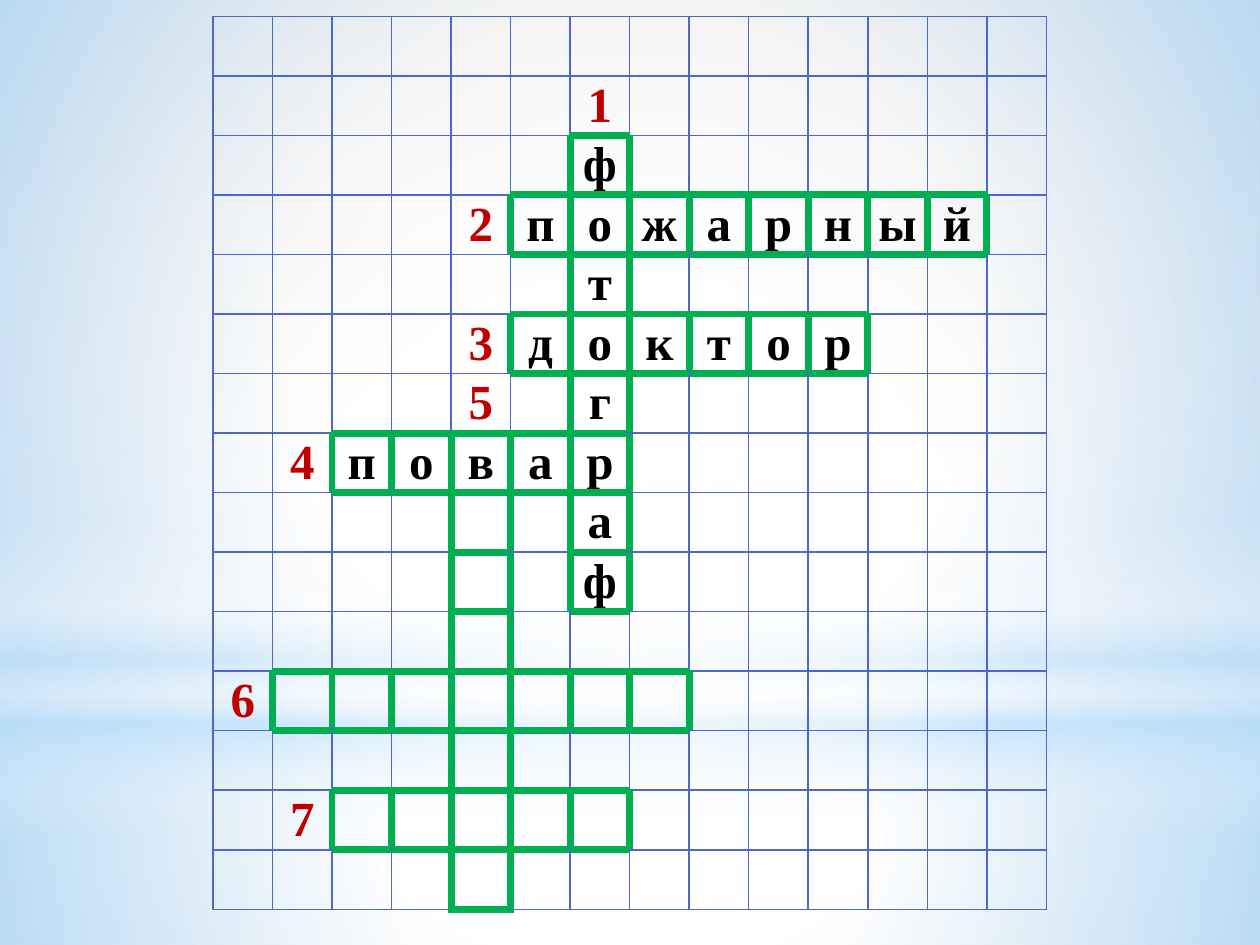
from typing import NamedTuple

import lxml.etree
import pptx
import pptx.dml.color
import pptx.enum.shapes
import pptx.enum.text
import pptx.oxml
import pptx.oxml.ns
import pptx.util

Inches = pptx.util.Inches
Kind = pptx.enum.shapes.MSO_SHAPE
ROWS, COLS = 15, 14
SIDE = 7.09 / ROWS
LEFT, TOP = 1.69, 0.13
BLUE, GREEN, RED, BLACK = "4E67C8", "00B050", "C00000", "000000"
WHITE, SKY = "FFFFFF", "B4DCFA"
FONT = "Times New Roman"
NS = pptx.oxml.ns.nsdecls("a")


class Stop(NamedTuple):
    at: int
    tint: str
    alpha: int = 100


class Glow(NamedTuple):
    kind: int
    box: tuple[float, float, float, float]
    stops: list[Stop]
    round: bool = True


class Word(NamedTuple):
    mark: str
    row: int
    col: int
    size: int
    text: str = ""
    down: bool = False


CENTRE = (50, 50, 50, 50)
GLOWS = [
    Glow(Kind.RECTANGLE, (0, 5.58, 10, 1.92),
         [Stop(0, WHITE, 91), Stop(37, WHITE, 76), Stop(100, SKY, 79)]),
    Glow(Kind.RECTANGLE, (0, 0, 10, 5.58),
         [Stop(0, WHITE, 89), Stop(48, WHITE, 62), Stop(100, SKY, 79)]),
    Glow(Kind.RECTANGLE, (0, 4.12, 10, 2.5),
         [Stop(0, WHITE, 0), Stop(29, WHITE, 30), Stop(45, SKY, 40),
          Stop(55, WHITE, 26), Stop(65, SKY, 60), Stop(100, WHITE, 0)], False),
    Glow(Kind.OVAL, (0, 1.75, 10, 5.58), [Stop(0, WHITE), Stop(56, WHITE, 0)]),
]

# Row and column of each word's first letter
WORDS = [
    Word("1", 2, 6, 8, "фотограф", True),
    Word("2", 3, 5, 8, "пожарный"),
    Word("3", 5, 5, 6, "доктор"),
    Word("4", 7, 2, 5, "повар"),
    Word("5", 7, 4, 8, down=True),
    Word("6", 11, 1, 7),
    Word("7", 13, 2, 5),
]
SIDES = {"L": (0, -1), "R": (0, 1), "T": (-1, 0), "B": (1, 0)}


def paint(fill, tint: str) -> None:
    fill.solid()
    fill.fore_color.rgb = pptx.dml.color.RGBColor.from_string(tint)


def blend(root, stops: list[Stop], focus: tuple | None) -> None:
    """Swap the solid fill under root for a gradient."""
    marks = "".join(
        f'<a:gs pos="{s.at * 1000}"><a:srgbClr val="{s.tint}">'
        f'<a:alpha val="{s.alpha * 1000}"/></a:srgbClr></a:gs>' for s in stops)
    if focus:
        rect = " ".join(f'{k}="{v * 1000}"' for k, v in zip("ltrb", focus))
        way = f'<a:path path="circle"><a:fillToRect {rect}/></a:path>'
    else:
        way = '<a:lin ang="5400000" scaled="0"/>'
    grad = pptx.oxml.parse_xml(
        f'<a:gradFill {NS} rotWithShape="1"><a:gsLst>{marks}</a:gsLst>{way}</a:gradFill>')
    old = root.find(".//" + pptx.oxml.ns.qn("a:solidFill"))
    old.getparent().replace(old, grad)


def draw_glow(slide, glow: Glow) -> None:
    shape = slide.shapes.add_shape(glow.kind, *map(Inches, glow.box))
    shape.shadow.inherit = False
    paint(shape.fill, WHITE)
    blend(shape.element, glow.stops, CENTRE if glow.round else None)
    shape.line.fill.background()


def edge(cell, side: str, tint: str, width: float) -> None:
    line = pptx.oxml.parse_xml(
        f'<a:ln{side} {NS} w="{pptx.util.Pt(width)}"><a:solidFill>'
        f'<a:srgbClr val="{tint}"/></a:solidFill></a:ln{side}>')
    cell._tc.get_or_add_tcPr().append(line)


def write(cell, text: str, tint: str) -> None:
    para = cell.text_frame.paragraphs[0]
    para.text = text
    para.alignment = pptx.enum.text.PP_ALIGN.CENTER
    font = para.font
    font.name, font.size, font.bold = FONT, pptx.util.Pt(28), True
    paint(font.fill, tint)


def draw_grid(slide, words: list[Word]) -> None:
    # Letters and clue numbers by place
    used, notes = {}, {}
    for word in words:
        dr, dc = (1, 0) if word.down else (0, 1)
        notes[word.row - dr, word.col - dc] = word.mark
        for i in range(word.size):
            spot = word.row + i * dr, word.col + i * dc
            used[spot] = word.text[i:i + 1] or used.get(spot, "")

    table = slide.shapes.add_table(
        ROWS, COLS, Inches(LEFT), Inches(TOP),
        Inches(SIDE * COLS), Inches(SIDE * ROWS)).table
    table.first_row = table.horz_banding = False
    for col in table.columns:
        col.width = Inches(SIDE)
    for r, row in enumerate(table.rows):
        row.height = Inches(SIDE)
        for c, cell in enumerate(row.cells):
            cell.margin_left = cell.margin_right = 0
            cell.margin_top = cell.margin_bottom = 0
            cell.vertical_anchor = pptx.enum.text.MSO_ANCHOR.MIDDLE
            # A side is thick where it touches a word
            for side, (dr, dc) in SIDES.items():
                thick = (r, c) in used or (r + dr, c + dc) in used
                edge(cell, side, *((GREEN, 4.5) if thick else (BLUE, 1)))
            cell.fill.background()
            if used.get((r, c)):
                write(cell, used[r, c], BLACK)
            elif (r, c) in notes:
                write(cell, notes[r, c], RED)


def main() -> None:
    deck = pptx.Presentation()
    deck.slide_width, deck.slide_height = Inches(10), Inches(7.5)
    slide = deck.slides.add_slide(deck.slide_layouts[6])

    # Backdrop
    paint(slide.background.fill, WHITE)
    blend(slide.element, [Stop(0, WHITE), Stop(42, WHITE), Stop(100, "D1D1D1")],
          (24, 44, 24, 12))
    for glow in GLOWS:
        draw_glow(slide, glow)

    # Crossword
    draw_grid(slide, WORDS)
    deck.save("out.pptx")


if __name__ == "__main__":
    main()
